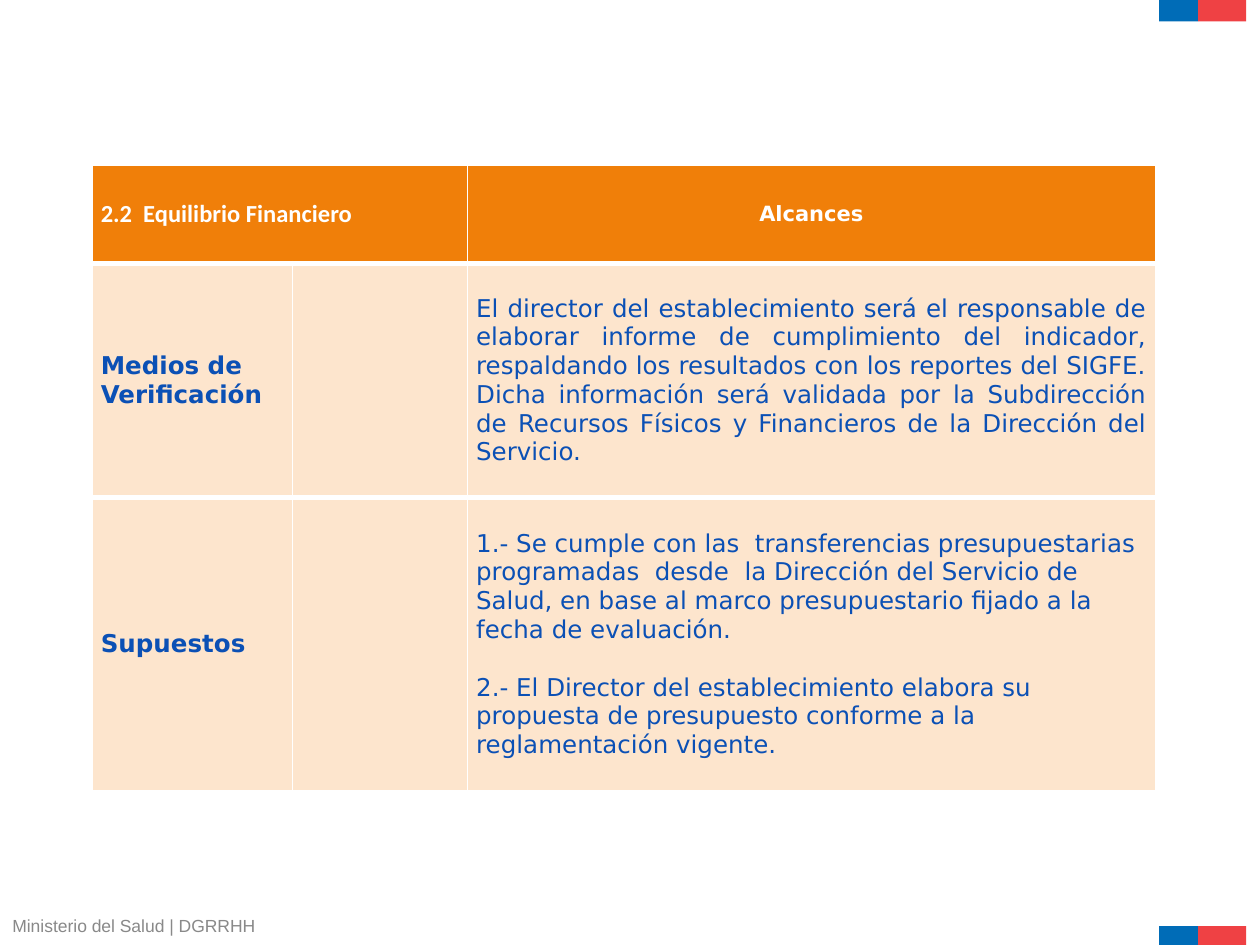
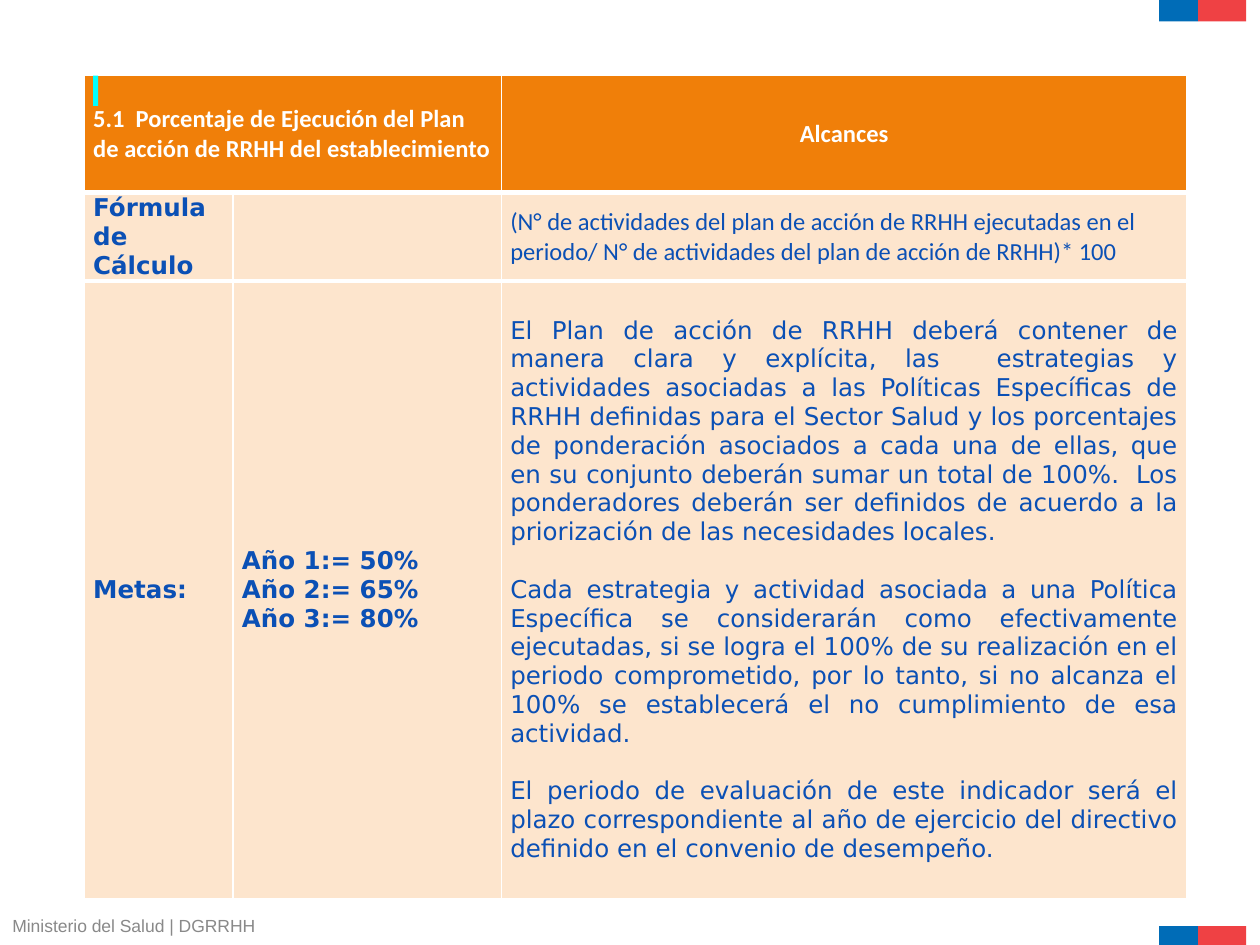
import pptx
import pptx.util
import pptx.dml.color
import pptx.enum.shapes
import pptx.enum.text
import pptx.oxml.ns
import lxml.etree

WIDE, HIGH = 10, 7.5
HUES = {
    "blue": "006CB7", "red": "EF4144", "grey": "898989", "white": "FFFFFF",
    "head": "F07F09", "body": "FDE5CD", "ink": "0B50B5", "mark": "00FFFF",
}
SANS, CALI = "DejaVu Sans", "Calibri"
FOOT = "Ministerio del Salud | DGRRHH"

# Text formats used in the cells
TITLE = dict(font=CALI, hue="white", bold=True)
HEAD = dict(TITLE, align="CENTER")
SMALL = dict(HEAD, font=SANS, size=12)
LABEL = dict(bold=True)
PLAIN = dict(gap=16.5)
JUST = dict(PLAIN, align="JUSTIFY")
CALC = dict(font=CALI)
BLANK = ([], {})

# Each table: place, column widths, row heights, rows of (lines, format)
TABLES = [
    dict(
        left=0.73, top=1.31, cols=[1.59, 1.39, 5.46], rows=[0.78, 1.86, 2.33],
        cells=[
            [(["2.2  Equilibrio Financiero"], TITLE), BLANK,
             (["Alcances"], SMALL)],
            [(["Medios de Verificación"], LABEL), BLANK, ([
                "El director del establecimiento será el responsable de "
                "elaborar informe de cumplimiento del indicador, respaldando "
                "los resultados con los reportes del SIGFE. Dicha información "
                "será validada por la Subdirección de Recursos Físicos y "
                "Financieros de la Dirección del Servicio."], JUST)],
            [(["Supuestos"], LABEL), BLANK, ([
                "1.- Se cumple con las  transferencias presupuestarias  "
                "programadas  desde  la Dirección del Servicio de Salud, en "
                "base al marco presupuestario fijado a la fecha de "
                "evaluación.",
                "2.- El Director del establecimiento elabora su propuesta de "
                "presupuesto conforme a la reglamentación vigente."], PLAIN)],
        ],
    ),
    dict(
        left=0.67, top=0.6, cols=[1.18, 2.13, 5.44], rows=[0.93, 0.7, 4.9],
        mark=True,
        cells=[
            [(["5.1  Porcentaje de Ejecución del Plan de acción de RRHH del "
               "establecimiento"], TITLE), BLANK, (["Alcances"], HEAD)],
            [(["Fórmula de Cálculo"], LABEL), BLANK, ([
                "(N° de actividades del plan de acción de RRHH ejecutadas en "
                "el periodo/ N° de actividades del plan de acción de RRHH)* "
                "100"], CALC)],
            [(["Metas:"], LABEL),
             (["Año 1:= 50%", "Año 2:= 65%", "Año 3:= 80%"], LABEL), ([
                "El Plan de acción de RRHH deberá contener de manera clara y "
                "explícita, las  estrategias y actividades asociadas a las "
                "Políticas Específicas de RRHH definidas para el Sector Salud "
                "y los porcentajes de ponderación asociados a cada una de "
                "ellas, que en su conjunto deberán sumar un total de 100%.  "
                "Los ponderadores deberán ser definidos de acuerdo a la "
                "priorización de las necesidades locales.",
                "Cada estrategia y actividad asociada a una Política "
                "Específica se considerarán como efectivamente ejecutadas, si "
                "se logra el 100% de su realización en el periodo "
                "comprometido, por lo tanto, si no alcanza el 100% se "
                "establecerá el no cumplimiento de esa actividad.",
                "El periodo de evaluación de este indicador será el plazo "
                "correspondiente al año de ejercicio del directivo definido "
                "en el convenio de desempeño."], JUST)],
        ],
    ),
]

inch = pptx.util.Inches


def tint(name):
    return pptx.dml.color.RGBColor.from_string(HUES[name])


def write(frame, lines, font=SANS, size=14, hue="ink", bold=False,
          align="LEFT", gap=0):
    """Fill a text frame; gap is the space in points between paragraphs."""
    for i, line in enumerate(lines):
        para = frame.add_paragraph() if i else frame.paragraphs[0]
        para.alignment = getattr(pptx.enum.text.PP_ALIGN, align)
        para.space_before = pptx.util.Pt(gap if i else 0)
        run = para.add_run()
        run.text = line
        run.font.name, run.font.size = font, pptx.util.Pt(size)
        run.font.bold = bold
        run.font.color.rgb = tint(hue)


def block(slide, hue, *box):
    shape = slide.shapes.add_shape(
        pptx.enum.shapes.MSO_SHAPE.RECTANGLE, *map(inch, box))
    shape.shadow.inherit = False
    shape.fill.solid()
    shape.fill.fore_color.rgb = tint(hue)
    shape.line.fill.background()


def frame(slide):
    """Draw the flag bands and the footer that every slide shares."""
    for top, tall in (0, 0.17), (HIGH - 0.15, 0.15):
        block(slide, "blue", 9.2, top, 0.31, tall)
        block(slide, "red", 9.51, top, 0.38, tall)
    box = slide.shapes.add_textbox(*map(inch, (0, 7.21, 2.13, 0.27)))
    box.text_frame.word_wrap = False
    write(box.text_frame, [FOOT], font="Arial", size=10, hue="grey")


def edge(cell, **sides):
    """Give a cell white borders; sides maps L, R, T, B to points."""
    props = cell._tc.get_or_add_tcPr()
    qn = pptx.oxml.ns.qn
    for i, (side, width) in enumerate(sides.items()):
        line = lxml.etree.Element(qn("a:ln" + side), w=str(pptx.util.Pt(width)))
        fill = lxml.etree.SubElement(line, qn("a:solidFill"))
        lxml.etree.SubElement(fill, qn("a:srgbClr"), val=HUES["white"])
        props.insert(i, line)


def grid(slide, left, top, cols, rows, cells, mark=False):
    box = map(inch, (left, top, sum(cols), sum(rows)))
    table = slide.shapes.add_table(len(rows), len(cols), *box).table
    table.horz_banding = table.first_row = False
    for col, width in zip(table.columns, cols):
        col.width = inch(width)
    for row, tall in zip(table.rows, rows):
        row.height = inch(tall)
    last = len(rows) - 1
    for r, row in enumerate(cells):
        for c, (lines, form) in enumerate(row):
            cell = table.cell(r, c)
            cell.fill.solid()
            cell.fill.fore_color.rgb = tint("body" if r else "head")
            edge(cell, L=1, R=1, T=3 if r else 1, B=3 if r < last else 1)
            cell.margin_left = cell.margin_right = inch(0.07)
            cell.margin_top = cell.margin_bottom = 0
            cell.vertical_anchor = pptx.enum.text.MSO_ANCHOR.MIDDLE
            write(cell.text_frame, lines, **form)
    table.cell(0, 0).merge(table.cell(0, 1))
    if mark:
        block(slide, "mark", left + 0.07, top, 0.04, 0.24)


def main():
    deck = pptx.Presentation()
    deck.slide_width, deck.slide_height = inch(WIDE), inch(HIGH)
    for table in TABLES:
        slide = deck.slides.add_slide(deck.slide_layouts[6])
        frame(slide)
        grid(slide, **table)
    deck.save("out.pptx")


if __name__ == "__main__":
    main()
